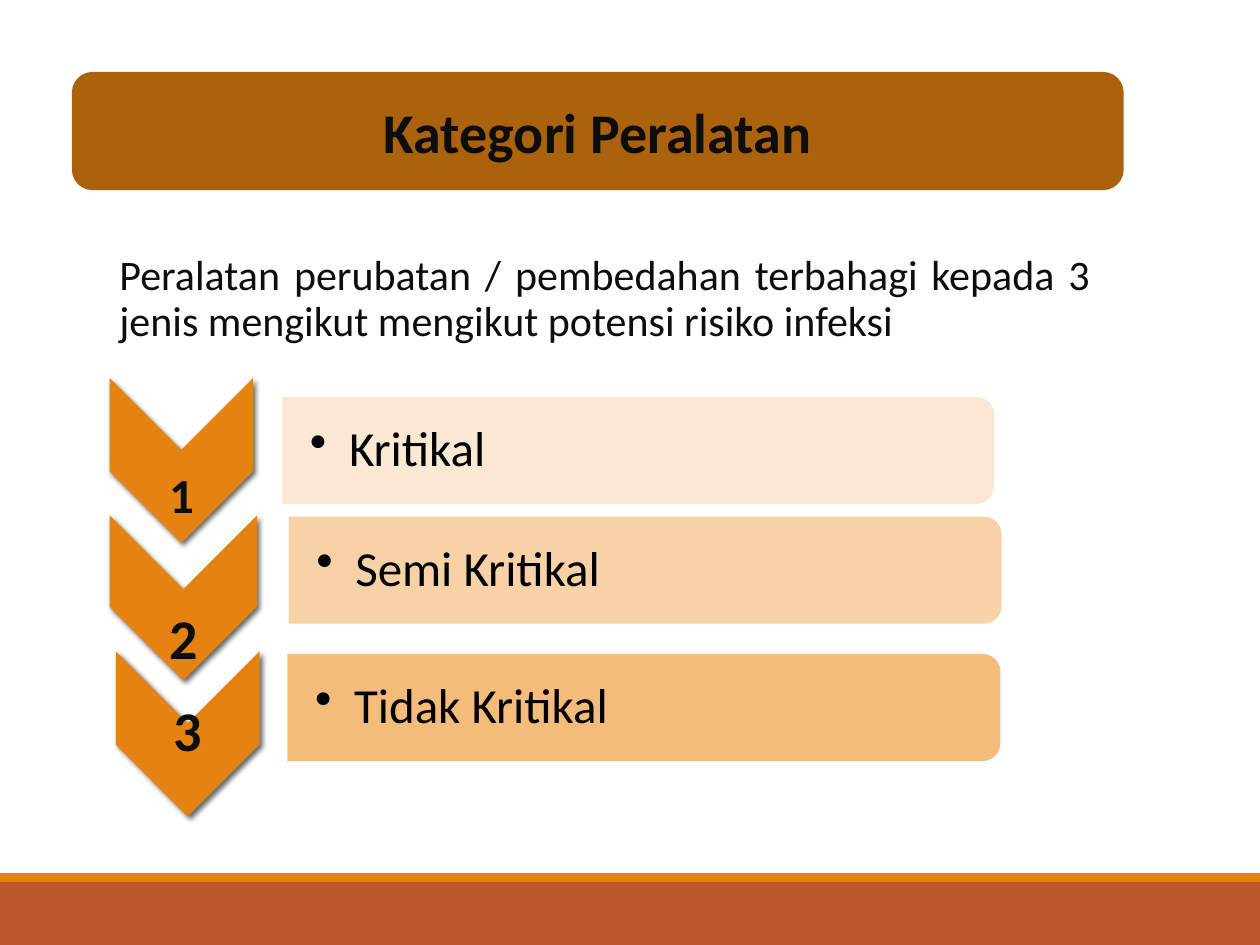
from dataclasses import dataclass

from lxml import etree
from pptx import Presentation, util as u
from pptx.dml.color import RGBColor
from pptx.enum import shapes, text
from pptx.oxml.ns import qn

KIND = shapes.MSO_SHAPE
ALIGN = text.PP_ALIGN
FONT = "Calibri"
HUES = {
    "rust": "BD582C",
    "orange": "E48312",
    "brown": "AB620D",
    "edge": "A9610D",
    "ink": "0D0D0D",
    "black": "000000",
    "pale": "FBE6CE",
    "light": "F7CE9D",
    "mid": "F3B56C",
}


@dataclass
class Box:
    left: float
    top: float
    width: float
    height: float

    def turn(self) -> "Box":
        """Frame that covers this box once rotated by 90 degrees."""
        shift = (self.width - self.height) / 2
        return Box(self.left + shift, self.top - shift, self.height, self.width)

    def emu(self) -> list[int]:
        return [u.Inches(v) for v in (self.left, self.top, self.width, self.height)]


@dataclass
class Level:
    digit: str
    size: int
    mark: Box    # chevron
    middle: float  # centre height of the digit
    label: str
    hue: str
    bar: Box


def hue(name: str) -> RGBColor:
    return RGBColor.from_string(HUES[name])


def add_shape(slide, kind, box: Box, fill: str):
    shape = slide.shapes.add_shape(kind, *box.emu())
    shape.shadow.inherit = False
    shape.fill.solid()
    shape.fill.fore_color.rgb = hue(fill)
    shape.line.fill.background()
    return shape


def write(frame, words: str, size: int, color: str, bold: bool = False,
          align=ALIGN.LEFT, anchor=text.MSO_ANCHOR.MIDDLE):
    frame.word_wrap = True
    frame.vertical_anchor = anchor
    para = frame.paragraphs[0]
    para.text = words
    para.alignment = align
    font = para.font
    font.name, font.size, font.bold = FONT, u.Pt(size), bold
    font.color.rgb = hue(color)
    return para


def add_text(slide, box: Box, words: str, size: int, color: str,
             inset: float | None = None, **style):
    frame = slide.shapes.add_textbox(*box.emu()).text_frame
    if inset is not None:
        frame.margin_left = u.Inches(inset)
        frame.margin_right = frame.margin_top = frame.margin_bottom = u.Inches(0.02)
    para = write(frame, words, size, color, **style)
    para.line_spacing = 0.9
    return para


def add_shadow(shape) -> None:
    effects = shape._element.spPr.find(qn("a:effectLst"))
    outer = etree.SubElement(effects, qn("a:outerShdw"), blurRad=str(u.Pt(3)),
                             dist=str(u.Pt(2)), dir="2700000", rotWithShape="0")
    color = etree.SubElement(outer, qn("a:srgbClr"), val=HUES["black"])
    etree.SubElement(color, qn("a:alpha"), val="60000")


def add_alpha(shape, percent: int) -> None:
    color = shape._element.spPr.find(qn("a:solidFill"))[0]
    etree.SubElement(color, qn("a:alpha"), val=str(percent * 1000))


def add_bullet(para, indent: float) -> None:
    props = para._p.get_or_add_pPr()
    props.set("marL", str(u.Inches(indent)))
    props.set("indent", str(-u.Inches(indent)))
    bullet = etree.Element(qn("a:buChar"), char="•")
    props.find(qn("a:defRPr")).addprevious(bullet)


def add_level(slide, level: Level) -> None:
    # Chevron with its number
    mark = add_shape(slide, KIND.CHEVRON, level.mark.turn(), "orange")
    mark.rotation = 90
    add_shadow(mark)
    place = Box(level.mark.left, level.middle - 0.25, level.mark.width, 0.5)
    add_text(slide, place, level.digit, level.size, "ink", inset=0.02,
             bold=True, align=ALIGN.CENTER)

    # Bar with its label
    bar = add_shape(slide, KIND.ROUND_2_SAME_RECTANGLE, level.bar.turn(), level.hue)
    bar.rotation = 90
    add_alpha(bar, 90)
    place = Box(level.bar.left, level.bar.top + 0.04, level.bar.width - 0.04, 0.77)
    para = add_text(slide, place, level.label, 28, "black", inset=0.22)
    add_bullet(para, 0.31)


def main() -> None:
    deck = Presentation()
    deck.slide_width, deck.slide_height = u.Inches(10), u.Inches(7.5)
    slide = deck.slides.add_slide(deck.slide_layouts[6])

    # Footer bands
    add_shape(slide, KIND.RECTANGLE, Box(0, 7, 10, 0.5), "rust")
    add_shape(slide, KIND.RECTANGLE, Box(0, 6.93, 10, 0.07), "orange")

    # Title
    title = add_shape(slide, KIND.ROUNDED_RECTANGLE, Box(0.58, 0.58, 8.33, 0.92), "brown")
    title.line.color.rgb = hue("edge")
    title.line.width = u.Pt(1.25)
    write(title.text_frame, "Kategori Peralatan", 32, "ink", bold=True, align=ALIGN.CENTER)

    # Introduction
    intro = add_text(
        slide, Box(0.75, 1.97, 8, 1.17),
        "Peralatan perubatan / pembedahan terbahagi kepada 3 jenis mengikut "
        "mengikut potensi risiko infeksi",
        24, "ink", align=ALIGN.JUSTIFY, anchor=text.MSO_ANCHOR.TOP)
    intro.space_before, intro.space_after = u.Pt(12), u.Pt(2)
    intro._p.get_or_add_pPr().set("marL", str(u.Inches(0.1)))

    # Three levels of risk
    levels = [
        Level("1", 28, Box(0.87, 3.0, 1.14, 1.31), 3.95,
              "Kritikal", "pale", Box(2.24, 3.15, 5.65, 0.85)),
        Level("2", 32, Box(0.87, 4.09, 1.17, 1.31), 5.09,
              "Semi Kritikal", "light", Box(2.29, 4.1, 5.66, 0.85)),
        Level("3", 32, Box(0.92, 5.17, 1.14, 1.31), 5.82,
              "Tidak Kritikal", "mid", Box(2.28, 5.19, 5.66, 0.85)),
    ]
    for level in levels:
        add_level(slide, level)

    deck.save("out.pptx")


if __name__ == "__main__":
    main()
